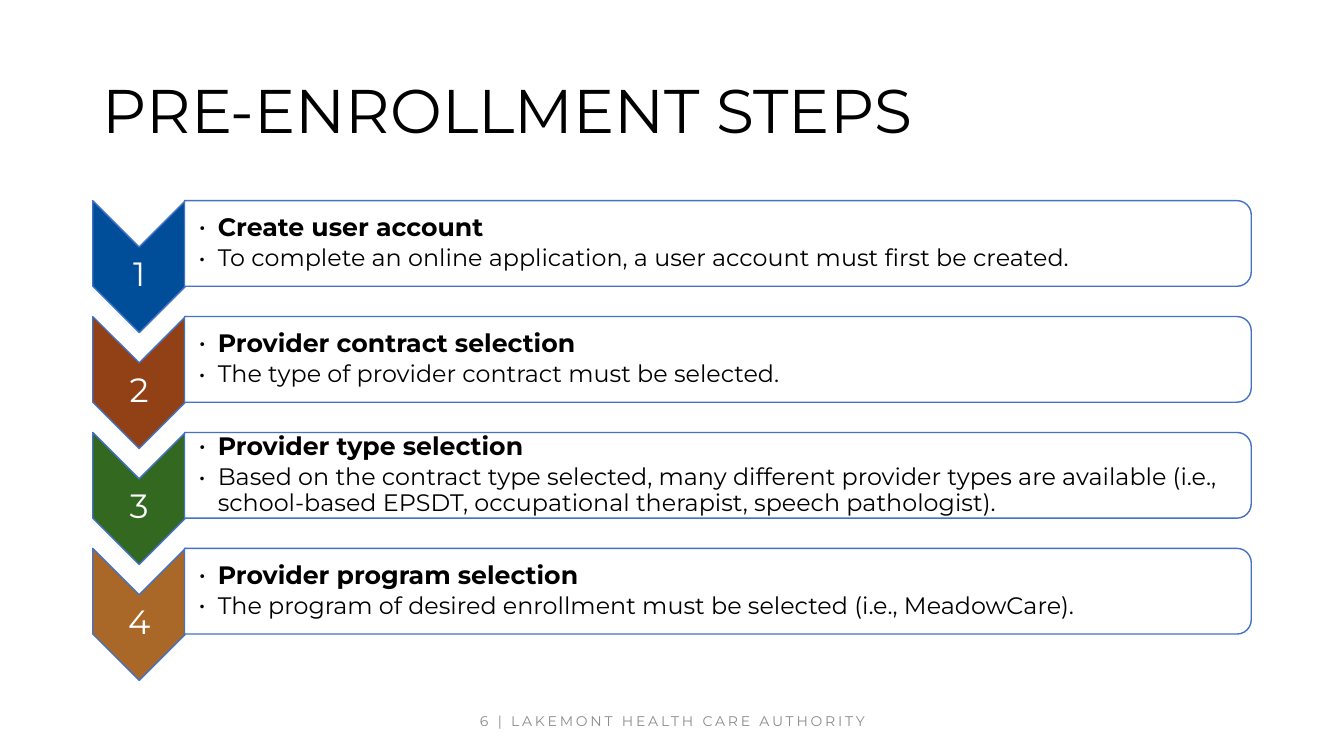
import pptx
import pptx.dml.color
import pptx.enum.shapes
import pptx.enum.text
import pptx.oxml.ns
import pptx.util
from lxml import etree

Inches = pptx.util.Inches
Pt = pptx.util.Pt
MSO_SHAPE = pptx.enum.shapes.MSO_SHAPE
PP_ALIGN = pptx.enum.text.PP_ALIGN
FONT = "Montserrat"

FIRST_TOP, PITCH = 1.99, 1.15
CHEVRON_LEFT, CHEVRON_W, CHEVRON_H = 0.92, 0.92, 1.31
PANEL_LEFT, PANEL_W, PANEL_H = 1.83, 10.58, 0.85

STEPS = [
    ("004E9A", "Create user account",
     "To complete an online application, a user account must first be created."),
    ("914115", "Provider contract selection",
     "The type of provider contract must be selected."),
    ("326820", "Provider type selection",
     "Based on the contract type selected, many different provider types are "
     "available (i.e., school-based EPSDT, occupational therapist, speech pathologist)."),
    ("A96728", "Provider program selection",
     "The program of desired enrollment must be selected (i.e., MeadowCare)."),
]


def rgb(color):
    return pptx.dml.color.RGBColor.from_string(color)


def style(p, size, color="000000", align=PP_ALIGN.LEFT, bold=False):
    p.font.name = FONT
    p.font.size = Pt(size)
    p.font.bold = bold
    p.font.color.rgb = rgb(color)
    p.alignment = align


def add_bullet(p):
    pPr = p._p.get_or_add_pPr()
    pPr.set("marL", str(Inches(0.19)))
    pPr.set("indent", str(-Inches(0.19)))
    for tag, attrs in (("a:buFont", {"typeface": FONT}), ("a:buChar", {"char": "•"})):
        bullet = etree.Element(pptx.oxml.ns.qn(tag), attrs)
        pPr.insert_element_before(bullet, "a:tabLst", "a:defRPr", "a:extLst")


def add_text_box(s, left, top, width, height, inset_left=0.01):
    tf = s.shapes.add_textbox(Inches(left), Inches(top),
                              Inches(width), Inches(height)).text_frame
    tf.word_wrap = True
    tf.vertical_anchor = pptx.enum.text.MSO_ANCHOR.MIDDLE
    tf.margin_left = Inches(inset_left)
    tf.margin_right = tf.margin_top = tf.margin_bottom = Inches(0.01)
    return tf


def add_turned_shape(s, kind, left, top, width, height, fill):
    """Add a shape turned by 90 degrees that fills the given visible box."""
    shift = (width - height) / 2
    sp = s.shapes.add_shape(kind, Inches(left + shift), Inches(top - shift),
                            Inches(height), Inches(width))
    sp.rotation = 90
    sp.shadow.inherit = False
    sp.fill.solid()
    sp.fill.fore_color.rgb = rgb(fill)
    sp.line.color.rgb = rgb("4472C4")
    sp.line.width = Pt(1)


def add_title(s, text):
    title = s.shapes.title
    title.left, title.top = Inches(0.92), Inches(0.4)
    title.width, title.height = Inches(11.5), Inches(1.45)
    tf = title.text_frame
    tf.text = text
    tf.vertical_anchor = pptx.enum.text.MSO_ANCHOR.MIDDLE
    p = tf.paragraphs[0]
    style(p, 44)
    p.line_spacing = 0.9


def add_step(s, number, top, color, heading, detail):
    # Numbered chevron
    add_turned_shape(s, MSO_SHAPE.CHEVRON, CHEVRON_LEFT, top,
                     CHEVRON_W, CHEVRON_H, color)
    tf = add_text_box(s, CHEVRON_LEFT, top + 0.55, CHEVRON_W, 0.39)
    p = tf.paragraphs[0]
    p.text = str(number)
    style(p, 24, "FFFFFF", PP_ALIGN.CENTER)
    p.line_spacing = 0.9

    # Panel with heading and detail
    add_turned_shape(s, MSO_SHAPE.ROUND_2_SAME_RECTANGLE, PANEL_LEFT, top,
                     PANEL_W, PANEL_H, "FFFFFF")
    tf = add_text_box(s, PANEL_LEFT, top + 0.04, 10.54, 0.77, inset_left=0.14)
    tf.text = f"{heading}\n{detail}"
    for p, size, bold in zip(tf.paragraphs, (18, 17), (True, False)):
        style(p, size, bold=bold)
        p.line_spacing = 0.9
        p.space_after = Pt(3)
        add_bullet(p)


def add_footer(s, text):
    p = add_text_box(s, 0.92, 6.95, 11.5, 0.4).paragraphs[0]
    r = p.add_run()
    r.text = text
    style(p, 10, "8C8C8C", PP_ALIGN.CENTER)
    r._r.get_or_add_rPr().set("spc", "200")


def main():
    prs = pptx.Presentation()
    prs.slide_width, prs.slide_height = Inches(13.33), Inches(7.5)
    s = prs.slides.add_slide(prs.slide_layouts.get_by_name("Title Only"))
    add_title(s, "PRE-ENROLLMENT STEPS")
    for i, step in enumerate(STEPS):
        add_step(s, i + 1, FIRST_TOP + i * PITCH, *step)
    add_footer(s, "6 | LAKEMONT HEALTH CARE AUTHORITY")
    prs.save("out.pptx")


if __name__ == "__main__":
    main()
